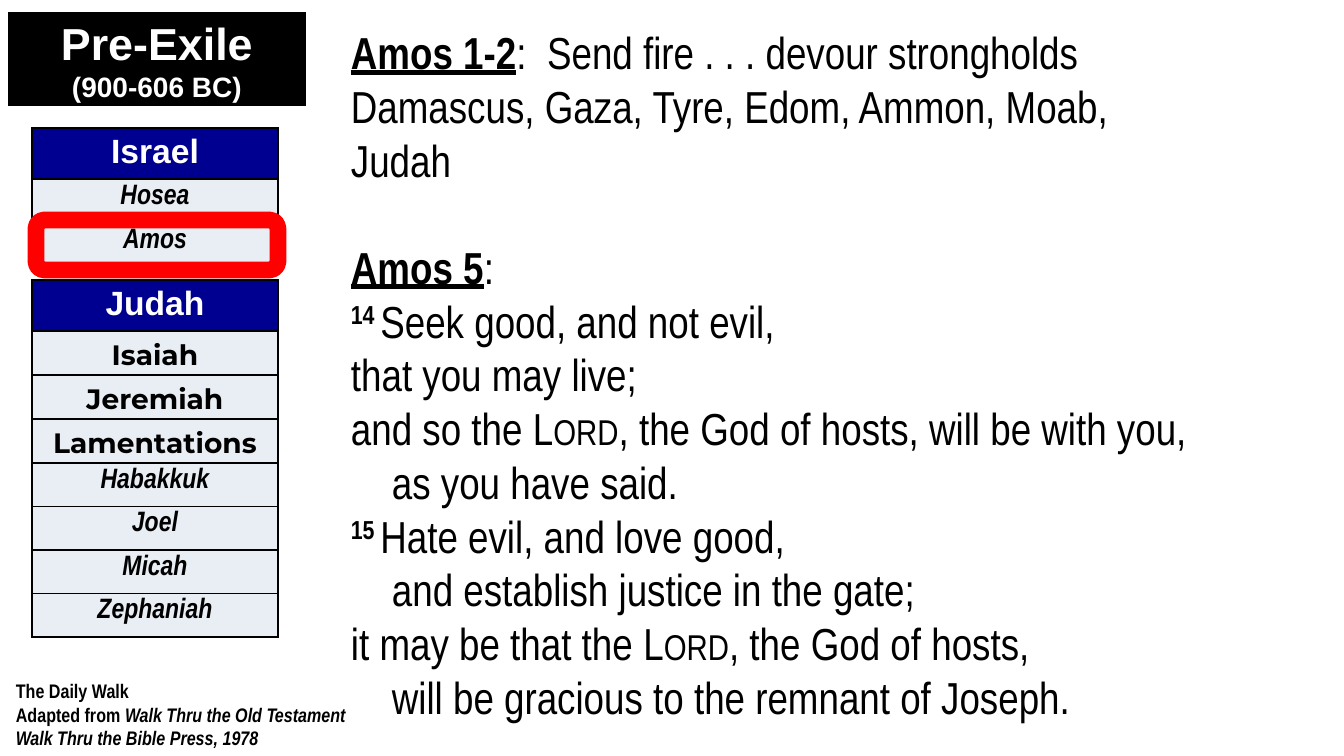
from lxml import etree
from pptx import Presentation
from pptx.dml.color import RGBColor as RGB
from pptx.enum.shapes import MSO_SHAPE as SHAPE
from pptx.enum.text import MSO_ANCHOR as ANCHOR, PP_ALIGN as ALIGN
from pptx.oxml.ns import qn
from pptx.util import Pt

COLORS = {"black": "000000", "white": "FFFFFF", "navy": "000090",
          "pale": "E9EDF4", "red": "FF0000"}

# Content. Run styles: b bold, i italic, u underline, ^ superscript, c small caps
ERA = [("Pre-Exile", 32), ("(900-606 BC)", 20)]

# kind: font, size, style, text colour, fill, anchor
KINDS = {
    "kingdom": ("Arial", 24, "b", "white", "navy", ANCHOR.TOP),
    "major": ("Montserrat", 20, "b", "black", "pale", ANCHOR.MIDDLE),
    "minor": ("Arial Narrow", 20, "bi", "black", "pale", ANCHOR.TOP),
}
# kind, top, height, names
TABLES = [
    ("minor", 179, 88, ["Hosea", "Amos"]),
    ("kingdom", 128, 51, ["Israel"]),
    ("kingdom", 280, 51, ["Judah"]),
    ("major", 331, 132, ["Isaiah", "Jeremiah", "Lamentations"]),
    ("minor", 463, 174, ["Habakkuk", "Joel", "Micah", "Zephaniah"]),
]
TABLE_LEFT, TABLE_WIDTH, CELL_TOP = 32, 246, 5

CREDIT = [
    [("The Daily Walk", "b")],
    [("Adapted from ", "b"), ("Walk Thru the Old Testament", "bi")],
    [("Walk Thru the Bible Press, 1978", "bi")],
]

# indent level, space before in points, runs
VERSES = [
    (0, 0, [("Amos 1-2", "bu"), (":  Send fire . . . devour strongholds", "")]),
    (0, 0, [("Damascus, Gaza, Tyre, Edom, Ammon, Moab,", "")]),
    (0, 0, [("Judah", "")]),
    (0, 38, [("Amos 5", "bu"), (":", "")]),
    (0, 0, [("14 ", "b^"), ("Seek good, and not evil,", "")]),
    (0, 0, [("that you may live;", "")]),
    (0, 0, [("and so the ", ""), ("Lord", "c"),
            (", the God of hosts, will be with you,", "")]),
    (1, 0, [("as you have said.", "")]),
    (0, 0, [("15 ", "b^"), ("Hate evil, and love good,", "")]),
    (1, 0, [("and establish justice in the gate;", "")]),
    (0, 0, [("it may be that the ", ""), ("Lord", "c"), (", the God of hosts,", "")]),
    (1, 0, [("will be gracious to the remnant of Joseph.", "")]),
]
INDENT = 41


def px(n):
    return round(n * 914400 / 100.8)


def color(name):
    return RGB.from_string(COLORS[name])


def add_run(p, text, font, size, style="", tint="black"):
    r = p.add_run()
    r.text = text
    f = r.font
    f.name, f.size = font, Pt(size)
    f.bold, f.italic, f.underline = "b" in style, "i" in style, "u" in style
    f.color.rgb = color(tint)
    rPr = r._r.get_or_add_rPr()
    if "^" in style:
        rPr.set("baseline", "30000")
    if "c" in style:
        rPr.set("cap", "small")


def paragraphs(tf, items):
    for i, item in enumerate(items):
        yield (tf.add_paragraph() if i else tf.paragraphs[0]), item


def add_shape(s, kind, box, line, width, fill=None):
    sp = s.shapes.add_shape(kind, *map(px, box))
    sp.shadow.inherit = False
    if fill:
        sp.fill.solid()
        sp.fill.fore_color.rgb = color(fill)
    else:
        sp.fill.background()
    sp.line.color.rgb = color(line)
    sp.line.width = Pt(width)
    return sp


def add_textbox(s, box):
    tf = s.shapes.add_textbox(*map(px, box)).text_frame
    tf.word_wrap = True
    return tf


def add_borders(cell):
    tcPr = cell._tc.get_or_add_tcPr()
    for i, side in enumerate(("lnL", "lnR", "lnT", "lnB")):
        ln = etree.Element(qn("a:" + side), w=str(Pt(1)))
        fill = etree.SubElement(ln, qn("a:solidFill"))
        etree.SubElement(fill, qn("a:srgbClr"), val=COLORS["black"])
        tcPr.insert(i, ln)


def add_books(s, kind, top, height, names):
    font, size, style, tint, fill, anchor = KINDS[kind]
    table = s.shapes.add_table(len(names), 1, px(TABLE_LEFT), px(top),
                               px(TABLE_WIDTH), px(height)).table
    table.first_row = table.horz_banding = False
    for i, name in enumerate(names):
        table.rows[i].height = px(height / len(names))
        cell = table.cell(i, 0)
        cell.margin_top, cell.margin_bottom = px(CELL_TOP), 0
        cell.vertical_anchor = anchor
        cell.fill.solid()
        cell.fill.fore_color.rgb = color(fill)
        add_borders(cell)
        p = cell.text_frame.paragraphs[0]
        p.alignment = ALIGN.CENTER
        add_run(p, name, font, size, style, tint)


def main():
    prs = Presentation()
    prs.slide_width, prs.slide_height = px(1344), px(756)
    s = prs.slides.add_slide(prs.slide_layouts[6])

    # Era heading
    sp = add_shape(s, SHAPE.RECTANGLE, (6, 10, 302, 98), "white", 3, "black")
    for p, (text, size) in paragraphs(sp.text_frame, ERA):
        p.alignment = ALIGN.CENTER
        add_run(p, text, "Arial", size, "b", "white")

    # Prophets by kingdom
    for books in TABLES:
        add_books(s, *books)

    # Credit
    for p, runs in paragraphs(add_textbox(s, (6, 674, 369, 82)), CREDIT):
        for text, style in runs:
            add_run(p, text, "Arial Narrow", 14, style)

    # Ring around Amos
    add_shape(s, SHAPE.ROUNDED_RECTANGLE, (36, 220, 242, 50), "red", 12)

    # Verses
    for p, (level, space, runs) in paragraphs(add_textbox(s, (341, 20, 967, 716)), VERSES):
        if level:
            p._p.get_or_add_pPr().set("marL", str(px(INDENT * level)))
        if space:
            p.space_before = Pt(space)
        for text, style in runs:
            add_run(p, text, "Arial Narrow", 32, style)

    prs.save("out.pptx")


if __name__ == "__main__":
    main()
